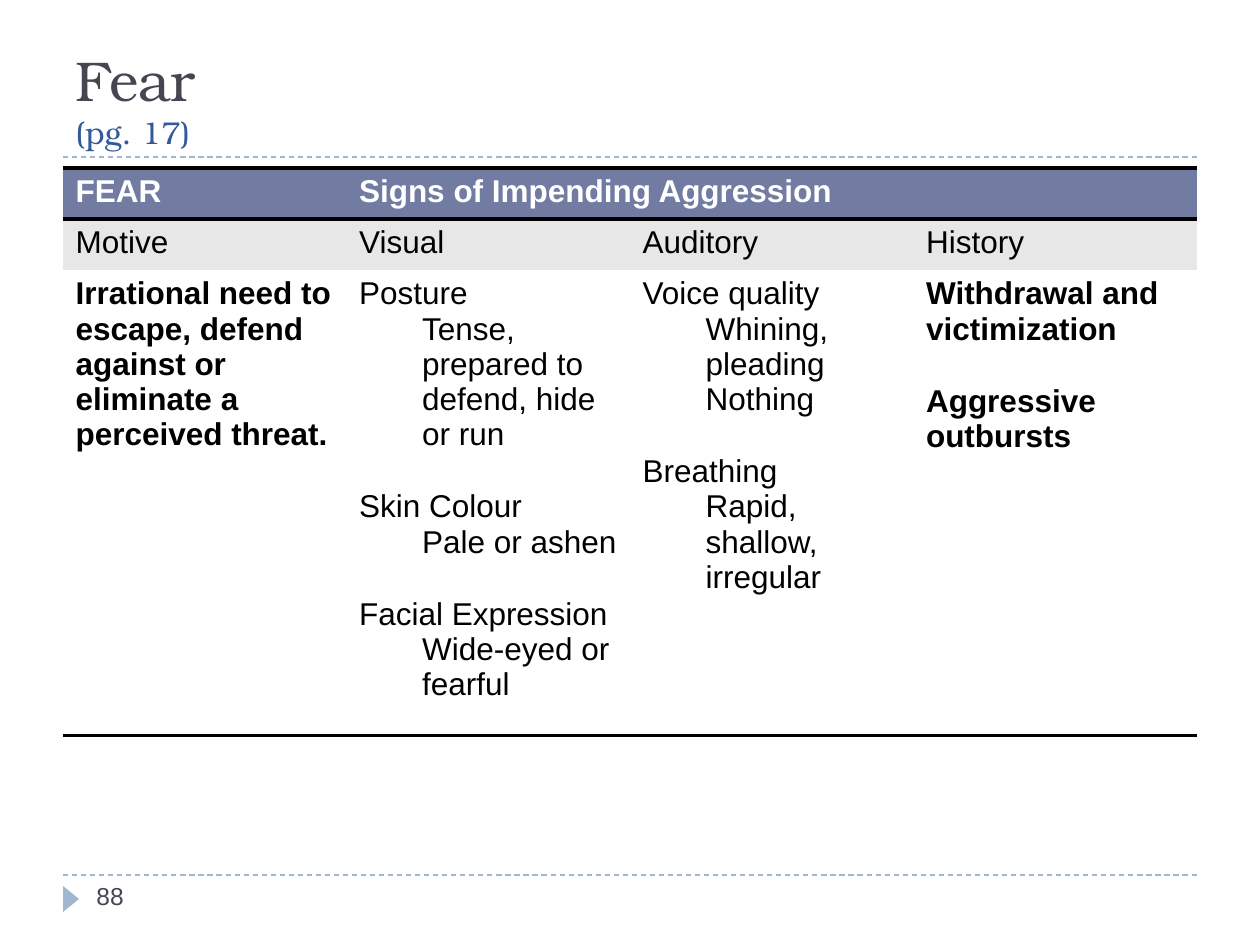
from lxml import etree
from pptx import Presentation
from pptx.dml.color import RGBColor
from pptx.enum.dml import MSO_LINE
from pptx.enum.shapes import MSO_CONNECTOR, MSO_SHAPE
from pptx.enum.text import MSO_ANCHOR, MSO_AUTO_SIZE, PP_ALIGN
from pptx.oxml.ns import qn
from pptx.util import Pt

PIXEL = 914400 / 126
SLATE = RGBColor(0x46, 0x46, 0x53)
BLUE = RGBColor(0x33, 0x59, 0x99)
PALE_BLUE = RGBColor(0x9F, 0xB8, 0xCD)
INDIGO = RGBColor(0x72, 0x7C, 0xA3)
GREY = RGBColor(0xE7, 0xE7, 0xE7)
WHITE = RGBColor(0xFF, 0xFF, 0xFF)
BLACK = RGBColor(0, 0, 0)
DASH = MSO_LINE.DASH
STRAIGHT = MSO_CONNECTOR.STRAIGHT
TRIANGLE = MSO_SHAPE.ISOSCELES_TRIANGLE
TOP = MSO_ANCHOR.TOP
BOTTOM = MSO_ANCHOR.BOTTOM
NO_AUTOFIT = MSO_AUTO_SIZE.NONE
LEFT = PP_ALIGN.LEFT
TITLE_ONLY = 5

HEADER = ["FEAR", "Signs of Impending Aggression"]
SUBHEADER = ["Motive", "Visual", "Auditory", "History"]
MOTIVE = [("Irrational need to escape, defend against or eliminate a perceived threat.", [])]
VISUAL = [
    ("Posture", ["Tense, prepared to defend, hide or run"]),
    ("Skin Colour", ["Pale or ashen"]),
    ("Facial Expression", ["Wide-eyed or fearful"]),
]
AUDITORY = [
    ("Voice quality", ["Whining, pleading", "Nothing"]),
    ("Breathing", ["Rapid, shallow, irregular"]),
]
HISTORY = [("Withdrawal and victimization", []), ("Aggressive outbursts", [])]


def px(length):
    return round(length * PIXEL)


class SlideBuilder:
    body_font = "Arial"
    title_font = "TeX Gyre Bonum"
    body_size = 18
    group_gap = 21
    indent = 63

    def __init__(self, slide):
        self.slide = slide

    def run(self, paragraph, text, size, color, font=body_font, bold=False):
        run = paragraph.add_run()
        run.text = text
        run.font.name = font
        run.font.size = Pt(size)
        run.font.bold = bold
        run.font.color.rgb = color

    def title(self, box, heading, page):
        shape = self.slide.shapes.title
        shape.left, shape.top, shape.width, shape.height = map(px, box)
        frame = shape.text_frame
        frame.auto_size = NO_AUTOFIT
        frame.vertical_anchor = BOTTOM
        paragraph = frame.paragraphs[0]
        paragraph.alignment = LEFT
        self.run(paragraph, heading, 32, SLATE, self.title_font)
        paragraph.add_line_break()
        line_break = paragraph._p.find(qn("a:br"))
        etree.SubElement(line_break, qn("a:rPr"), sz="3200")
        self.run(paragraph, page, 18, BLUE, self.title_font)

    def rule(self, left, right, y):
        line = self.slide.shapes.add_connector(STRAIGHT, px(left), px(y), px(right), px(y))
        line.line.color.rgb = PALE_BLUE
        line.line.width = Pt(0.75)
        line.line.dash_style = DASH
        etree.SubElement(line._element.spPr, qn("a:effectLst"))

    def marker(self, box):
        shape = self.slide.shapes.add_shape(TRIANGLE, *map(px, box))
        shape.shadow.inherit = False
        shape.rotation = 90
        shape.fill.solid()
        shape.fill.fore_color.rgb = PALE_BLUE
        shape.line.fill.background()

    def text(self, box, text, size):
        frame = self.slide.shapes.add_textbox(*map(px, box)).text_frame
        frame.word_wrap = True
        frame.vertical_anchor = TOP
        self.run(frame.paragraphs[0], text, size, SLATE)

    def table(self, box, row_heights):
        frame = self.slide.shapes.add_table(len(row_heights), 4, *map(px, box))
        table = frame.table
        table.first_row = False
        table.horz_banding = False
        for row, height in zip(table.rows, row_heights):
            row.height = px(height)
        return table

    def cell(self, cell, groups, fill, color=BLACK, bold=False, edges=""):
        self.borders(cell, edges)
        cell.fill.solid()
        cell.fill.fore_color.rgb = fill
        frame = cell.text_frame
        paragraph = frame.paragraphs[0]
        for index, (heading, details) in enumerate(groups):
            if index:
                paragraph = frame.add_paragraph()
                paragraph.space_before = Pt(self.group_gap)
            self.run(paragraph, heading, self.body_size, color, bold=bold)
            for detail in details:
                paragraph = frame.add_paragraph()
                paragraph.level = 1
                paragraph._p.get_or_add_pPr().set("marL", str(px(self.indent)))
                self.run(paragraph, detail, self.body_size, color, bold=bold)

    def borders(self, cell, edges):
        properties = cell._tc.get_or_add_tcPr()
        for edge in "LRTB":
            line = etree.SubElement(properties, qn(f"a:ln{edge}"), w=str(Pt(2)))
            if edge in edges:
                fill = etree.SubElement(line, qn("a:solidFill"))
                etree.SubElement(fill, qn("a:srgbClr"), val=str(BLACK))
            else:
                etree.SubElement(line, qn("a:noFill"))


def main():
    presentation = Presentation()
    presentation.slide_width = px(1260)
    presentation.slide_height = px(945)
    slide = presentation.slides.add_slide(presentation.slide_layouts[TITLE_ONLY])
    builder = SlideBuilder(slide)

    for y in (875, 157):
        builder.rule(63, 1197, y)
    builder.marker((58, 891, 26, 16))
    builder.title((63, 21, 1134, 136), "Fear", "(pg. 17)")
    builder.text((84, 875, 273, 50), "88", 14)

    table = builder.table((63, 168, 1134, 568), (51, 51, 466))
    table.cell(0, 1).merge(table.cell(0, 3))
    for column in range(4):
        groups = [(text, []) for text in HEADER[column:column + 1]]
        builder.cell(table.cell(0, column), groups, INDIGO, WHITE, True, "TB")
    for column, text in enumerate(SUBHEADER):
        builder.cell(table.cell(1, column), [(text, [])], GREY, edges="T")
    for column, groups in enumerate((MOTIVE, VISUAL, AUDITORY, HISTORY)):
        bold = groups in (MOTIVE, HISTORY)
        builder.cell(table.cell(2, column), groups, WHITE, bold=bold, edges="B")

    presentation.save("out.pptx")


if __name__ == "__main__":
    main()
